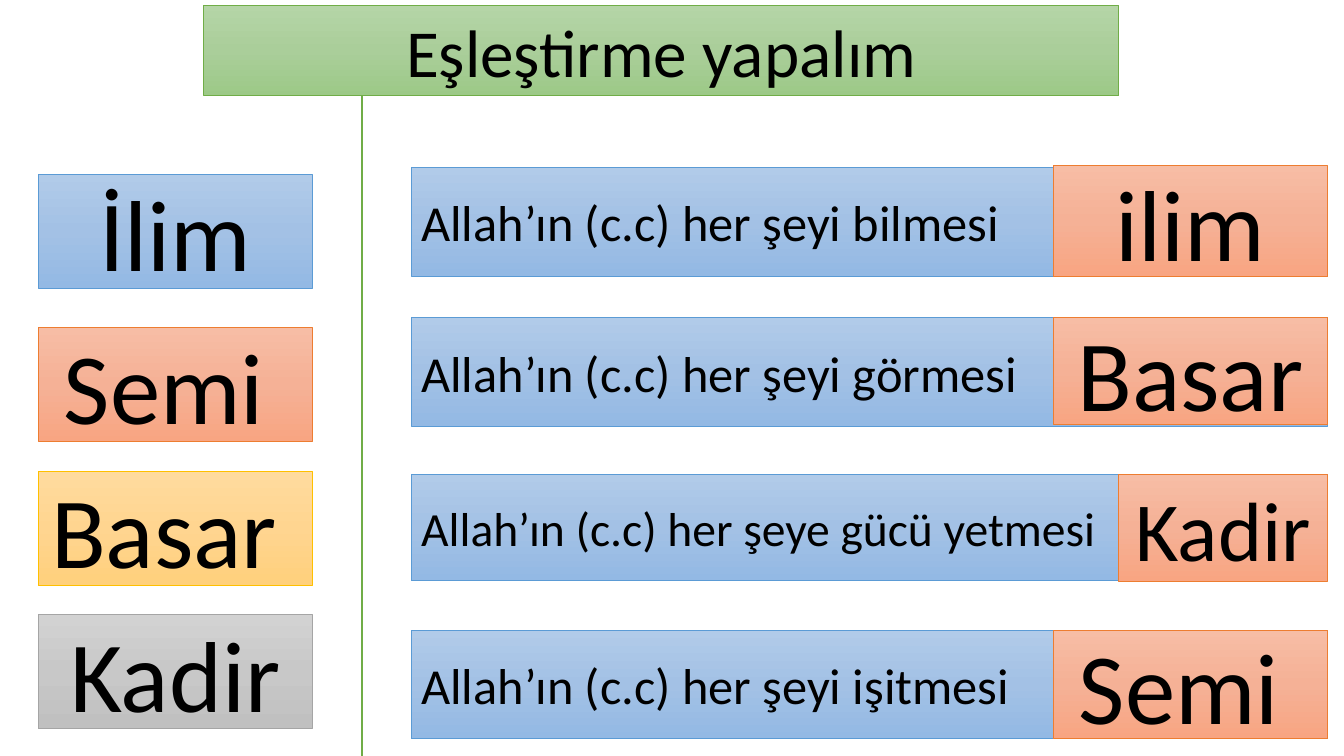
"""Build the matching exercise slide."""
import copy
from dataclasses import dataclass

import pptx
import pptx.dml.color
import pptx.enum.shapes
import pptx.enum.text
import pptx.oxml
import pptx.oxml.ns
import pptx.util

COLUMNS, ROWS = 40, 30
WIDTH, HEIGHT = pptx.util.Inches(13.33), pptx.util.Inches(7.5)


@dataclass(frozen=True)
class Theme:
    """Colours as (line, gradient start, middle, end) and type sizes."""
    font: str = "Calibri"
    text: str = "000000"
    blue: tuple = ("5B9BD5", "B1CBE9", "A3C1E5", "93B9E4")
    orange: tuple = ("ED7D31", "F7BDA5", "F5B196", "F8A582")
    gold: tuple = ("FFC000", "FFDB9E", "FFD590", "FFD07C")
    grey: tuple = ("A5A5A5", "D2D2D2", "C8C8C8", "C0C0C0")
    green: tuple = ("70AD47", "B5D5A7", "AACE9A", "9CC987")
    name_size: int = 72
    small_name_size: int = 60
    title_size: int = 48
    meaning_size: int = 36
    long_meaning_size: int = 34
    border: float = 0.5
    divider: float = 1.5


THEME = Theme()
CENTER = pptx.enum.text.PP_ALIGN.CENTER
LEFT = pptx.enum.text.PP_ALIGN.LEFT


def rgb(value):
    """Turn a hex string into a colour."""
    return pptx.dml.color.RGBColor.from_string(value)


def across(columns):
    """Convert grid columns to a length."""
    return round(WIDTH * columns / COLUMNS)


def down(rows):
    """Convert grid rows to a length."""
    return round(HEIGHT * rows / ROWS)


def fill_gradient(shape, colours):
    """Fill a shape from top to bottom with three evenly spaced colours."""
    shape.fill.gradient()
    shape.fill.gradient_angle = 270
    stop_list = shape.element.spPr.find(".//" + pptx.oxml.ns.qn("a:gsLst"))
    stop_list.insert(1, copy.deepcopy(stop_list[0]))
    for index, (stop, colour) in enumerate(zip(shape.fill.gradient_stops, colours)):
        stop.position = index / 2
        stop.color.rgb = rgb(colour)


def add_box(slide, text, box, palette, size, alignment=CENTER):
    """Add a gradient rectangle with text, placed by grid columns and rows."""
    left, top, width, height = box
    shape = slide.shapes.add_shape(
        pptx.enum.shapes.MSO_SHAPE.RECTANGLE,
        across(left), down(top), across(width), down(height))
    shape.shadow.inherit = False
    line_colour, *gradient = palette
    fill_gradient(shape, gradient)
    shape.line.color.rgb = rgb(line_colour)
    shape.line.width = pptx.util.Pt(THEME.border)
    shape.text_frame.text = text
    shape.text_frame.vertical_anchor = pptx.enum.text.MSO_ANCHOR.MIDDLE
    paragraph = shape.text_frame.paragraphs[0]
    paragraph.alignment = alignment
    font = paragraph.runs[0].font
    font.name, font.size = THEME.font, pptx.util.Pt(size)
    font.color.rgb = rgb(THEME.text)


def add_divider(slide, column, top, bottom):
    """Add the vertical line between names and meanings."""
    connector = slide.shapes.add_connector(
        pptx.enum.shapes.MSO_CONNECTOR.STRAIGHT,
        across(column), down(top), across(column), down(bottom))
    connector.line.color.rgb = rgb(THEME.green[0])
    connector.line.width = pptx.util.Pt(THEME.divider)
    connector.element.spPr.append(pptx.oxml.parse_xml(
        "<a:effectLst %s/>" % pptx.oxml.ns.nsdecls("a")))


def add_names(slide):
    """Add the column of names to match."""
    names = [
        ("İlim", 6.92, THEME.blue),
        ("Semi ", 13, THEME.orange),
        ("Basar ", 18.72, THEME.gold),
        ("Kadir", 24.4, THEME.grey),
    ]
    for text, top, palette in names:
        add_box(slide, text, (1.14, top, 8.16, 4.52), palette, THEME.name_size)


def add_pairs(slide):
    """Add each meaning with its answer over the right end."""
    left, right = 12.24, 39.51
    wide, narrow = 8.16, 6.21
    normal, long = THEME.meaning_size, THEME.long_meaning_size
    large, small = THEME.name_size, THEME.small_name_size
    pairs = [
        ("Allah’ın (c.c) her şeyi bilmesi", 6.64, 4.32, normal,
         "ilim", 6.56, 4.4, wide, large),
        ("Allah’ın (c.c) her şeyi görmesi", 12.6, 4.32, normal,
         "Basar", 12.6, 4.24, wide, large),
        ("Allah’ın (c.c) her şeye gücü yetmesi", 18.84, 4.2, long,
         "Kadir", 18.84, 4.24, narrow, small),
        ("Allah’ın (c.c) her şeyi işitmesi", 25, 4.32, normal,
         "Semi ", 25, 4.32, wide, large),
    ]
    for (meaning, top, height, size,
         answer, answer_top, answer_height, width, answer_size) in pairs:
        add_box(slide, meaning, (left, top, right - left, height),
                THEME.blue, size, LEFT)
        add_box(slide, answer, (right - width, answer_top, width, answer_height),
                THEME.orange, answer_size)


def main():
    """Build and save the presentation."""
    presentation = pptx.Presentation()
    presentation.slide_width, presentation.slide_height = WIDTH, HEIGHT
    slide = presentation.slides.add_slide(presentation.slide_layouts[6])
    add_names(slide)
    add_pairs(slide)
    add_divider(slide, 10.77, 3, ROWS)
    add_box(slide, "Eşleştirme yapalım", (6.06, 0.2, 27.24, 3.6),
            THEME.green, THEME.title_size)
    presentation.save("out.pptx")


if __name__ == "__main__":
    main()
